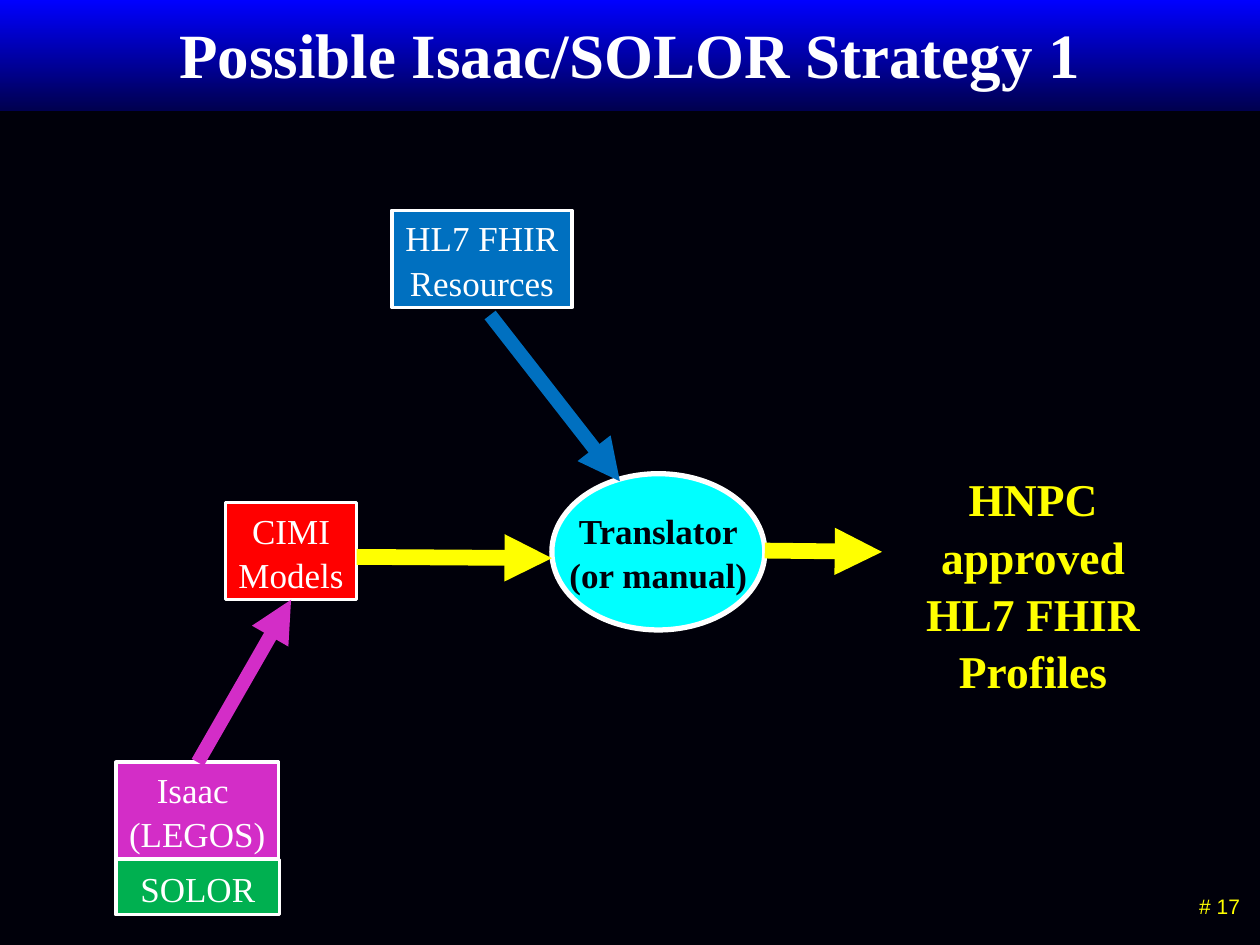
from pptx import Presentation
from pptx.dml.color import RGBColor
from pptx.enum.shapes import MSO_CONNECTOR, MSO_SHAPE
from pptx.enum.text import MSO_ANCHOR, PP_ALIGN
from pptx.oxml.ns import qn
from pptx.util import Inches, Pt
from lxml.etree import SubElement

BACKGROUND = RGBColor(0x00, 0x00, 0x0A)
NAVY = RGBColor(0x00, 0x00, 0x4F)
BRIGHT_BLUE = RGBColor(0x00, 0x00, 0xFF)
WHITE = RGBColor(0xFF, 0xFF, 0xFF)
YELLOW = RGBColor(0xFF, 0xFF, 0x00)
RED = RGBColor(0xFF, 0x00, 0x00)
GREEN = RGBColor(0x00, 0xB0, 0x50)
CYAN = RGBColor(0x00, 0xFF, 0xFF)
BLUE = RGBColor(0x00, 0x70, 0xC0)
MAGENTA = RGBColor(0xD3, 0x2D, 0xC7)


class SlideBuilder:
    font = "Times New Roman"
    line_spacing = 1.05

    def __init__(self, prs):
        self.s = prs.slides.add_slide(prs.slide_layouts[5])
        fill = self.s.background.fill
        fill.solid()
        fill.fore_color.rgb = BACKGROUND

    def set_text(self, tf, text, size, color, bold=False, align=PP_ALIGN.CENTER, font=None):
        tf.text = text
        for p in tf.paragraphs:
            p.alignment = align
            p.line_spacing = self.line_spacing
            for r in p.runs:
                r.font.name = font or self.font
                r.font.size = Pt(size)
                r.font.bold = bold
                r.font.color.rgb = color

    def band(self, x, y, w, h):
        sp = self.s.shapes.add_shape(
            MSO_SHAPE.RECTANGLE, Inches(x), Inches(y), Inches(w), Inches(h))
        sp.shadow.inherit = False
        sp.line.fill.background()
        sp.fill.gradient()
        sp.fill.gradient_angle = 270
        for stop, color, position in zip(sp.fill.gradient_stops, (BRIGHT_BLUE, NAVY), (0, 1)):
            stop.color.rgb = color
            stop.position = position
        tree = self.s.shapes.element
        tree.remove(sp.element)
        tree.insert(2, sp.element)

    def title(self, text, x, y, w, h):
        sp = self.s.shapes.title
        sp.left, sp.top, sp.width, sp.height = Inches(x), Inches(y), Inches(w), Inches(h)
        tf = sp.text_frame
        tf.vertical_anchor = MSO_ANCHOR.TOP
        tf.margin_top = Inches(0.09)
        self.set_text(tf, text, 36, WHITE, bold=True)

    def node(self, text, x, y, w, h, fill, shape=MSO_SHAPE.RECTANGLE,
             color=WHITE, bold=False, border=2):
        sp = self.s.shapes.add_shape(shape, Inches(x), Inches(y), Inches(w), Inches(h))
        sp.shadow.inherit = False
        sp.fill.solid()
        sp.fill.fore_color.rgb = fill
        sp.line.color.rgb = WHITE
        sp.line.width = Pt(border)
        tf = sp.text_frame
        tf.word_wrap = False
        tf.vertical_anchor = MSO_ANCHOR.MIDDLE
        self.set_text(tf, text, 20, color, bold)

    def label(self, text, x, y, w, h, size, **style):
        tf = self.s.shapes.add_textbox(
            Inches(x), Inches(y), Inches(w), Inches(h)).text_frame
        tf.word_wrap = True
        self.set_text(tf, text, size, YELLOW, **style)

    def arrow(self, x1, y1, x2, y2, color, width):
        c = self.s.shapes.add_connector(
            MSO_CONNECTOR.STRAIGHT, Inches(x1), Inches(y1), Inches(x2), Inches(y2))
        c.line.color.rgb = color
        c.line.width = Pt(width)
        props = c.element.spPr
        SubElement(props.find(qn("a:ln")), qn("a:tailEnd"), type="triangle")
        SubElement(props, qn("a:effectLst"))


def main():
    prs = Presentation()
    prs.slide_width, prs.slide_height = Inches(10), Inches(7.5)
    b = SlideBuilder(prs)

    b.band(0, 0, 10, 0.88)
    b.title("Possible Isaac/SOLOR Strategy 1", 0.5, 0, 9, 0.94)
    b.label("# 17", 8.9, 7.03, 1.04, 0.34, 12, align=PP_ALIGN.RIGHT, font="Arial")

    b.node("CIMI\nModels", 1.79, 3.99, 1.04, 0.77, RED)
    b.node("SOLOR", 0.92, 6.82, 1.3, 0.44, GREEN)
    b.label("HNPC approved\nHL7 FHIR\nProfiles", 6.83, 3.67, 2.74, 1.41, 26, bold=True)
    b.node("Translator\n(or manual)", 4.38, 3.76, 1.69, 1.24, CYAN,
           MSO_SHAPE.OVAL, BACKGROUND, bold=True, border=3)
    b.arrow(2.83, 4.42, 4.38, 4.43, YELLOW, 9)
    b.arrow(6.07, 4.37, 7, 4.38, YELLOW, 9)
    b.node("HL7 FHIR\nResources", 3.11, 1.67, 1.43, 0.77, BLUE)
    b.arrow(3.89, 2.5, 4.92, 3.82, BLUE, 8)
    b.node("Isaac \n(LEGOS)", 0.92, 6.05, 1.29, 0.77, MAGENTA)
    b.arrow(1.57, 6.05, 2.31, 4.76, MAGENTA, 8)

    prs.save("out.pptx")


if __name__ == "__main__":
    main()
